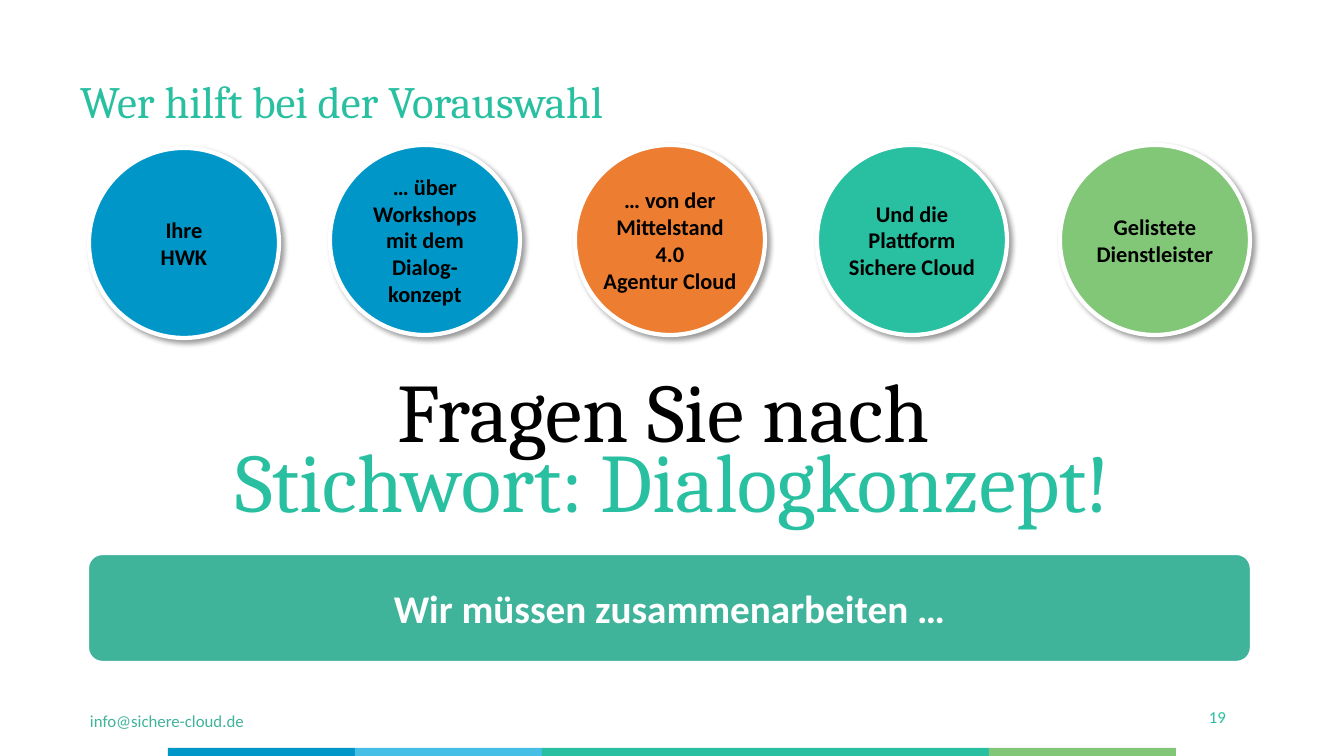
from dataclasses import dataclass
from lxml.etree import SubElement
from pptx import Presentation
from pptx.dml.color import RGBColor
from pptx.enum.shapes import MSO_SHAPE
from pptx.enum.text import MSO_ANCHOR, PP_ALIGN
from pptx.oxml.ns import qn
from pptx.util import Emu, Pt

PX = 914400 / 100.8


@dataclass(frozen=True)
class Theme:
    blue: str = "0096C7"
    sky: str = "45BFE5"
    teal: str = "29BFA1"
    sea: str = "40B39B"
    green: str = "82C778"
    orange: str = "ED7D31"
    black: str = "000000"
    white: str = "FFFFFF"
    body_font: str = "Calibri"
    head_font: str = "Cambria"
    small: float = 12
    label: float = 16
    banner: float = 28
    title: float = 32
    call: float = 59.4
    outline: float = 3


THEME = Theme()


def px(length):
    return Emu(round(length * PX))


def style(font, name, size, color, bold=False):
    font.name, font.size, font.bold = name, Pt(size), bold
    font.color.rgb = RGBColor.from_string(color)


def add_filled(page, kind, box, fill, outlined=False):
    shape = page.shapes.add_shape(kind, *map(px, box))
    shape.shadow.inherit = False
    shape.fill.solid()
    shape.fill.fore_color.rgb = RGBColor.from_string(fill)
    if outlined:
        shape.line.color.rgb = RGBColor.from_string(THEME.white)
        shape.line.width = Pt(THEME.outline)
    else:
        shape.line.fill.background()
    return shape


def set_frame(shape, anchor, inset=(0, 0), wrap=True):
    frame = shape.text_frame
    frame.word_wrap, frame.vertical_anchor = wrap, anchor
    frame.margin_left = frame.margin_right = px(inset[0])
    frame.margin_top = frame.margin_bottom = px(inset[1])
    return frame


def write(frame, lines, font, align=PP_ALIGN.LEFT):
    """Write one paragraph per line; font is (name, size, color, bold)."""
    for index, line in enumerate(lines):
        para = frame.add_paragraph() if index else frame.paragraphs[0]
        para.text, para.alignment = line, align
        style(para.font, *font)


def add_text(page, box, anchor, inset=(0, 0), wrap=True):
    return set_frame(page.shapes.add_textbox(*map(px, box)), anchor, inset, wrap)


def cast_shadow(shape):
    effects = shape._element.spPr.find(qn("a:effectLst"))
    shadow = SubElement(effects, qn("a:outerShdw"), blurRad=str(Pt(4)),
                        dist=str(Pt(3)), dir=str(45 * 60000), rotWithShape="0")
    color = SubElement(shadow, qn("a:srgbClr"), val=THEME.black)
    SubElement(color, qn("a:alpha"), val="40000")


def add_title(page, box):
    frame = add_text(page, box, MSO_ANCHOR.TOP)
    write(frame, ["Wer hilft bei der Vorauswahl"],
          (THEME.head_font, THEME.title, THEME.teal))
    frame.paragraphs[0].line_spacing = 0.9


def add_helpers(page, box):
    left, top, width, height = box
    helpers = [
        (0, 3, THEME.blue, ["Ihre", "HWK"]),
        (241, 0, THEME.blue, ["… über Workshops mit dem Dialog-konzept"]),
        (486, 0, THEME.orange, ["… von der Mittelstand 4.0", "Agentur Cloud"]),
        (728, 0, THEME.teal, ["Und die Plattform Sichere Cloud"]),
        (width - height, 0, THEME.green, ["Gelistete\vDienstleister"]),
    ]
    for across, down, fill, lines in helpers:
        circle = add_filled(page, MSO_SHAPE.OVAL,
                            (left + across, top + down, height, height), fill, True)
        cast_shadow(circle)
        write(set_frame(circle, MSO_ANCHOR.MIDDLE), lines,
              (THEME.body_font, THEME.label, THEME.black, True), PP_ALIGN.CENTER)


def add_call(page, box):
    frame = add_text(page, box, MSO_ANCHOR.TOP, (10, 5))
    para = frame.paragraphs[0]
    para.alignment, para.line_spacing = PP_ALIGN.CENTER, 0.7
    lines = [("Fragen Sie nach ", THEME.black),
             ("Stichwort: Dialogkonzept!", THEME.teal)]
    for index, (words, color) in enumerate(lines):
        if index:
            para.add_line_break()
        span = para.add_run()
        span.text = words
        style(span.font, THEME.head_font, THEME.call, color)


def add_banner(page, box):
    banner = add_filled(page, MSO_SHAPE.ROUNDED_RECTANGLE, box, THEME.sea, True)
    banner.adjustments[0] = 0.14
    write(set_frame(banner, MSO_ANCHOR.MIDDLE, (10, 5)),
          ["Wir müssen zusammenarbeiten …"],
          (THEME.body_font, THEME.banner, THEME.white, True), PP_ALIGN.CENTER)


def add_footer(page, box):
    left, top, width, height = box
    contact = add_text(page, (left, top, 454, 40), MSO_ANCHOR.MIDDLE, (10, 5))
    write(contact, ["info@sichere-cloud.de"],
          (THEME.body_font, THEME.small, THEME.sea))
    number = add_text(page, (left + width - 51, top, 51, 31),
                      MSO_ANCHOR.MIDDLE, (10, 5), wrap=False)
    write(number, ["19"], (THEME.body_font, THEME.small, THEME.teal),
          PP_ALIGN.CENTER)
    # Colour stripe along the lower edge
    across = 168
    for length, fill in [(187, THEME.blue), (187, THEME.sky),
                         (447, THEME.teal), (187, THEME.green)]:
        add_filled(page, MSO_SHAPE.RECTANGLE,
                   (across, top + height - 8, length, 8), fill)
        across += length


def main():
    deck = Presentation()
    deck.slide_width, deck.slide_height = px(1344), px(756)
    page = deck.slides.add_slide(deck.slide_layouts[6])
    add_footer(page, (80, 701, 1163, 55))
    add_helpers(page, (89, 145, 1161, 190))
    add_title(page, (80, 80, 1012, 83))
    add_banner(page, (87, 553, 1165, 110))
    add_call(page, (93, 382, 1159, 169))
    deck.save("out.pptx")


if __name__ == "__main__":
    main()
